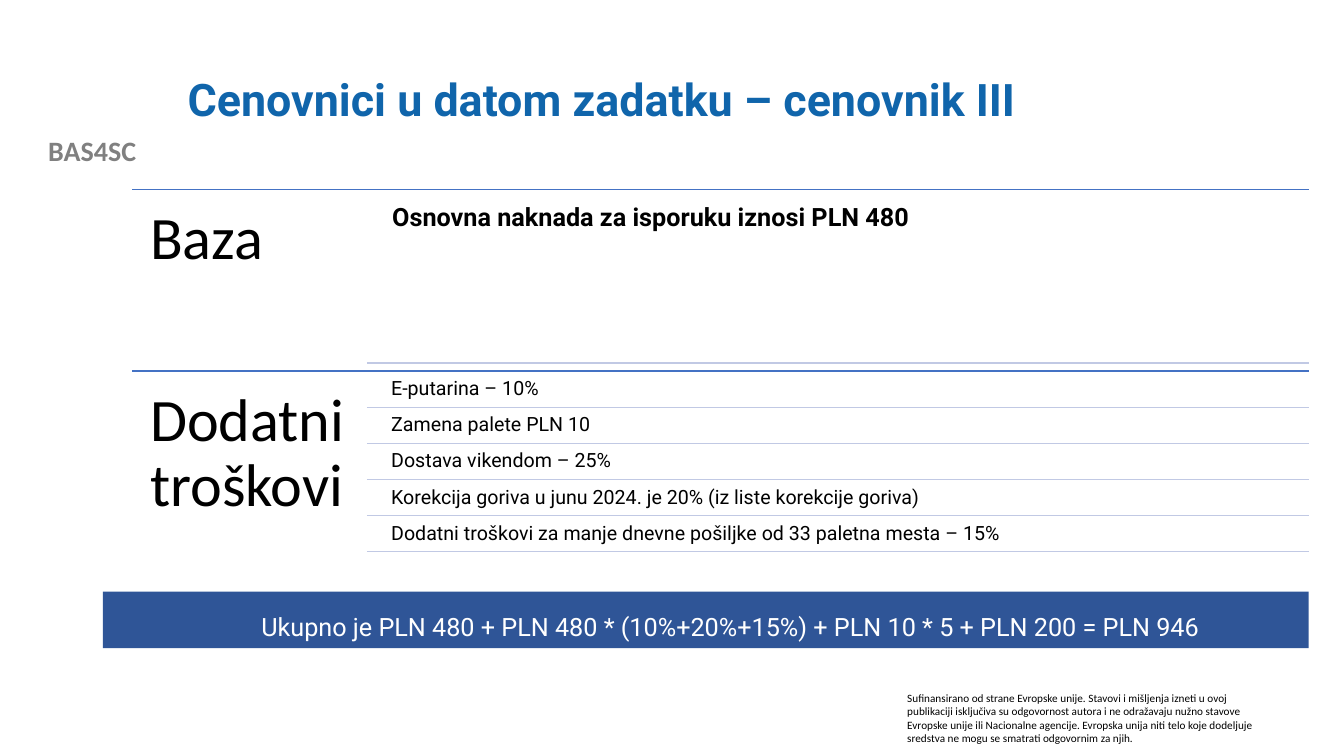
"""Build the price list III slide with its base fee, surcharges and total."""
from dataclasses import dataclass

from lxml import etree
from pptx import Presentation
from pptx.dml.color import RGBColor
from pptx.enum.shapes import MSO_CONNECTOR, MSO_SHAPE
from pptx.enum.text import MSO_ANCHOR, MSO_AUTO_SIZE, PP_ALIGN
from pptx.oxml.ns import qn
from pptx.util import Inches, Pt

STRAIGHT = MSO_CONNECTOR.STRAIGHT
RECTANGLE = MSO_SHAPE.RECTANGLE
TOP, MIDDLE = MSO_ANCHOR.TOP, MSO_ANCHOR.MIDDLE
LEFT, CENTER = PP_ALIGN.LEFT, PP_ALIGN.CENTER
NO_FIT = MSO_AUTO_SIZE.NONE

TITLE = "Cenovnici u datom zadatku – cenovnik III"
PROJECT = "BAS4SC"
DISCLAIMER = (
    "Sufinansirano od strane Evropske unije. Stavovi i mišljenja izneti u ovoj "
    "publikaciji isključiva su odgovornost autora i ne odražavaju nužno stavove "
    "Evropske unije ili Nacionalne agencije. Evropska unija niti telo koje dodeljuje "
    "sredstva ne mogu se smatrati odgovornim za njih."
)
SECTIONS = ["Baza", "Dodatni troškovi"]
BASE_FEE = "Osnovna naknada za isporuku iznosi PLN 480"
SURCHARGES = [
    "E-putarina – 10%",
    "Zamena palete PLN 10",
    "Dostava vikendom – 25%",
    "Korekcija goriva u junu 2024. je 20% (iz liste korekcije goriva)",
    "Dodatni troškovi za manje dnevne pošiljke od 33 paletna mesta – 15%",
]
TOTAL = "Ukupno je PLN 480 + PLN 480 * (10%+20%+15%) + PLN 10 * 5 + PLN 200 = PLN 946"


@dataclass(frozen=True)
class Style:
    size: float
    font: str
    color: str
    bold: bool = False


@dataclass(frozen=True)
class Theme:
    title: Style = Style(32, "Roboto", "1065AB", True)
    project: Style = Style(20, "Calibri", "808080", True)
    disclaimer: Style = Style(8, "Calibri", "000000")
    section: Style = Style(43, "Calibri", "000000")
    base_fee: Style = Style(18, "Roboto", "000000", True)
    surcharge: Style = Style(14, "Roboto", "000000")
    total: Style = Style(18, "Roboto", "FFFFFF")
    total_fill: str = "2F5597"
    section_rule: str = "4472C4"
    item_rule: str = "C1C9E4"


THEME = Theme()
SECTION_LEFT, ITEM_LEFT, ITEM_TEXT_LEFT, RIGHT = 1.31, 3.64, 3.82, 12.98
SECTION_TOP, SECTION_HEIGHT = 1.88, 1.8
ITEM_WIDTH = RIGHT - ITEM_TEXT_LEFT
BASE_TOP, BASE_HEIGHT = 1.96, 1.64
FIRST_RULE, LAST_RULE = 4.04, 5.47
ROW_HEIGHT, ROW_GAP = 0.34, 0.02


def write(shape, text, style, align=LEFT, anchor=TOP, spacing=1.0):
    frame = shape.text_frame
    frame.word_wrap = True
    frame.auto_size = NO_FIT
    frame.vertical_anchor = anchor
    paragraph = frame.paragraphs[0]
    paragraph.alignment = align
    paragraph.line_spacing = spacing
    run = paragraph.add_run()
    run.text = text
    run.font.size = Pt(style.size)
    run.font.name = style.font
    run.font.bold = style.bold
    run.font.color.rgb = RGBColor.from_string(style.color)
    return paragraph


def add_text(slide, box, text, style, inset=None, **layout):
    shape = slide.shapes.add_textbox(*map(Inches, box))
    if inset is not None:
        frame = shape.text_frame
        frame.margin_left = frame.margin_right = Inches(inset)
        frame.margin_top = frame.margin_bottom = Inches(inset)
    write(shape, text, style, **layout)


def add_rule(slide, left, top, color):
    ends = map(Inches, (left, top, RIGHT, top))
    connector = slide.shapes.add_connector(STRAIGHT, *ends)
    connector.line.color.rgb = RGBColor.from_string(color)
    connector.line.width = Pt(1)
    etree.SubElement(connector._element.spPr, qn("a:effectLst"))


def add_title(slide):
    title = slide.shapes.title
    title.left, title.top, title.width, title.height = map(
        Inches, (1.76, 0.4, 10.66, 1.22)
    )
    write(title, TITLE, THEME.title, anchor=MIDDLE, spacing=0.9)


def add_total(slide):
    bar = slide.shapes.add_shape(RECTANGLE, *map(Inches, (1.02, 5.87, 11.96, 0.56)))
    bar.shadow.inherit = False
    bar.fill.solid()
    bar.fill.fore_color.rgb = RGBColor.from_string(THEME.total_fill)
    bar.line.fill.background()
    paragraph = write(bar, TOTAL, THEME.total, align=CENTER, spacing=1.5)
    paragraph.space_after = Pt(6)
    properties = paragraph._p.get_or_add_pPr()
    properties.set("marL", "0")
    properties.set("indent", str(Inches(0.49)))


def add_sections(slide):
    for index, name in enumerate(SECTIONS):
        top = SECTION_TOP + index * SECTION_HEIGHT
        add_rule(slide, SECTION_LEFT, top, THEME.section_rule)
        box = (SECTION_LEFT, top, ITEM_LEFT - SECTION_LEFT, SECTION_HEIGHT)
        add_text(slide, box, name, THEME.section, inset=0.18, spacing=0.9)


def add_items(slide):
    base_box = (ITEM_TEXT_LEFT, BASE_TOP, ITEM_WIDTH, BASE_HEIGHT)
    add_text(slide, base_box, BASE_FEE, THEME.base_fee, inset=0.07, spacing=0.9)
    add_rule(slide, ITEM_LEFT, BASE_TOP + BASE_HEIGHT, THEME.item_rule)
    pitch = (LAST_RULE - FIRST_RULE) / (len(SURCHARGES) - 1)
    first_top = FIRST_RULE - ROW_HEIGHT
    for index, surcharge in enumerate(SURCHARGES):
        box = (ITEM_TEXT_LEFT, first_top + index * pitch, ITEM_WIDTH, ROW_HEIGHT)
        add_text(slide, box, surcharge, THEME.surcharge, inset=0.06, spacing=0.9)
        add_rule(slide, ITEM_LEFT, FIRST_RULE + index * pitch, THEME.item_rule)


def main():
    presentation = Presentation()
    presentation.slide_width = Inches(13.33)
    presentation.slide_height = Inches(7.5)
    slide = presentation.slides.add_slide(presentation.slide_layouts[5])
    add_text(slide, (0, 1.28, 1.83, 0.44), PROJECT, THEME.project, align=CENTER)
    add_text(slide, (8.9, 6.81, 3.7, 0.64), DISCLAIMER, THEME.disclaimer)
    add_title(slide)
    add_total(slide)
    add_sections(slide)
    add_items(slide)
    presentation.save("out.pptx")


if __name__ == "__main__":
    main()
